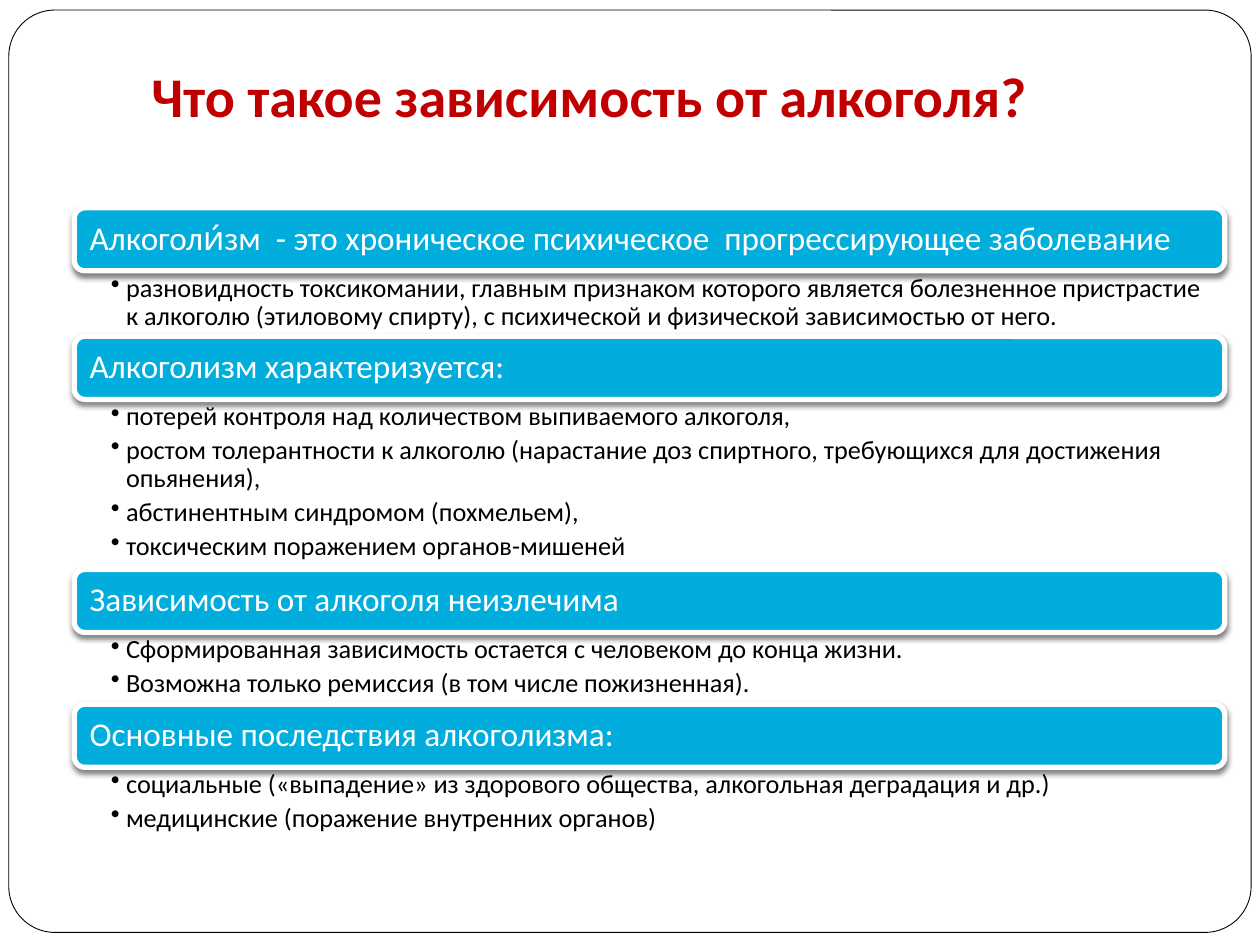
from lxml.etree import SubElement
from pptx import Presentation
from pptx.dml.color import RGBColor
from pptx.enum.shapes import MSO_SHAPE
from pptx.enum.text import MSO_ANCHOR, PP_ALIGN
from pptx.oxml.ns import qn
from pptx.util import Inches, Pt

FONT = "Calibri"
LEFT, TOP, WIDTH, BAR = 0.59, 1.65, 9.13, 0.5

# heading, height of the list below it, list items
PARTS = [
    ("Алкоголи́зм  - это хроническое психическое  прогрессирующее заболевание", 0.52, [
        "разновидность токсикомании, главным признаком которого является "
        "болезненное пристрастие к алкоголю (этиловому спирту), "
        "с психической и физической зависимостью от него."]),
    ("Алкоголизм характеризуется: ", 1.35, [
        "потерей контроля над количеством выпиваемого алкоголя,",
        "ростом толерантности к алкоголю (нарастание доз спиртного, "
        "требующихся для достижения опьянения), ",
        "абстинентным синдромом (похмельем), ",
        "токсическим поражением органов-мишеней"]),
    ("Зависимость от алкоголя неизлечима", 0.57, [
        "Сформированная зависимость остается с человеком до конца жизни.",
        "Возможна только ремиссия (в том числе пожизненная)."]),
    ("Основные последствия алкоголизма:", 0.57, [
        "социальные («выпадение» из здорового общества, алкогольная деградация и др.)",
        "медицинские (поражение внутренних органов)"]),
]


def paint(target, color):
    target.solid()
    target.fore_color.rgb = RGBColor.from_string(color)


def box(slide, *place):
    return slide.shapes.add_textbox(*map(Inches, place)).text_frame


def panel(slide, place, fill, line, width):
    """Add a rounded rectangle without a shadow."""
    shape = slide.shapes.add_shape(MSO_SHAPE.ROUNDED_RECTANGLE, *map(Inches, place))
    shape.shadow.inherit = False
    paint(shape.fill, fill)
    paint(shape.line.fill, line)
    shape.line.width = Pt(width)
    return shape


def shade(shape):
    """Give the shape a soft half-clear shadow straight below it."""
    effects = shape._element.spPr.find(qn("a:effectLst"))
    outer = SubElement(effects, qn("a:outerShdw"), blurRad=str(Pt(3)),
                       dist=str(Pt(2)), dir="5400000", rotWithShape="0")
    color = SubElement(outer, qn("a:srgbClr"), val="000000")
    SubElement(color, qn("a:alpha"), val="50000")


def frame(text, left, top, right, base, anchor=MSO_ANCHOR.TOP):
    """Set wrapping, insets and anchor of a text frame."""
    text.word_wrap = True
    text.margin_left, text.margin_top = Inches(left), Inches(top)
    text.margin_right, text.margin_bottom = Inches(right), Inches(base)
    text.vertical_anchor = anchor


def write(par, words, size, color, bold=False, align=PP_ALIGN.LEFT):
    par.alignment = align
    run = par.add_run()
    run.text = words
    run.font.name = FONT
    run.font.size = Pt(size)
    run.font.bold = bold
    paint(run.font.fill, color)


def dot(par):
    """Turn the paragraph into a bullet with a hanging indent."""
    props = par._p.get_or_add_pPr()
    props.set("marL", str(Inches(0.12)))
    props.set("indent", str(-Inches(0.12)))
    SubElement(props, qn("a:buChar"), char="•")


def title(slide):
    text = box(slide, 0.43, 0.44, 8.5, 0.94)
    frame(text, 0.1, 0.05, 0.1, 0.1)
    write(text.paragraphs[0], "Что такое зависимость от алкоголя?", 32, "C00000",
          True, PP_ALIGN.CENTER)


def head(slide, top, words):
    bar = panel(slide, (LEFT, top, WIDTH, BAR), "00ADDC", "FFFFFF", 3)
    shade(bar)
    text = bar.text_frame
    frame(text, 0.1, 0.08, 0.1, 0.08, MSO_ANCHOR.MIDDLE)
    par = text.paragraphs[0]
    par.line_spacing = 0.9
    write(par, words, 19, "FFFFFF")


def points(slide, top, height, items):
    text = box(slide, LEFT, top, WIDTH, height)
    frame(text, 0.29, 0.03, 0.15, 0.03)
    for i, item in enumerate(items):
        par = text.add_paragraph() if i else text.paragraphs[0]
        par.level = 1
        dot(par)
        par.line_spacing = 0.9
        par.space_after = Pt(3)
        write(par, item, 15, "000000")


def main():
    deck = Presentation()
    deck.slide_width, deck.slide_height = Inches(10), Inches(7.5)
    slide = deck.slides.add_slide(deck.slide_layouts[6])
    paint(slide.background.fill, "FFFFFF")
    border = panel(slide, (0.07, 0.08, 9.86, 7.32), "FFFFFF", "000000", 0.5)
    border.adjustments[0] = 0.05
    title(slide)
    top = TOP
    for words, height, items in PARTS:
        head(slide, top, words)
        points(slide, top + BAR, height, items)
        top += BAR + height
    deck.save("out.pptx")


if __name__ == "__main__":
    main()
